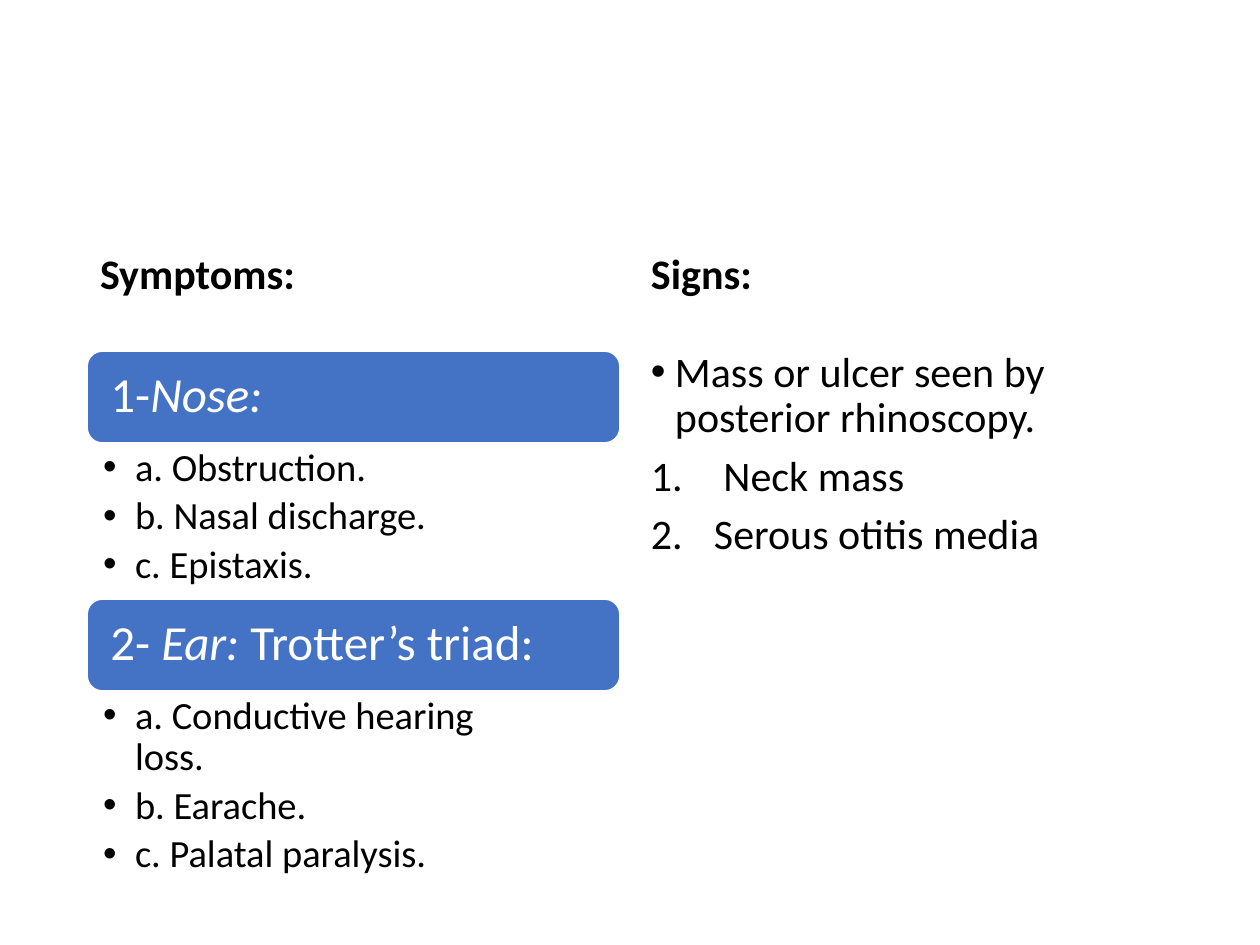
"""Build a slide that lists symptoms beside signs."""
from pptx import Presentation
from pptx.dml.color import RGBColor
from pptx.enum.shapes import MSO_SHAPE as Shape
from pptx.enum.text import MSO_ANCHOR as Anchor, PP_ALIGN as Align
from pptx.oxml.ns import qn
from pptx.util import Emu, Pt
from lxml.etree import SubElement


def px(count):
    return Emu(round(count * 914400 / 126))


def write(frame, paragraphs, size, color="000000", bold=False, before=0, after=0,
          insets=(13, 6, 13, 6), anchor=Anchor.TOP):
    frame.word_wrap = True
    frame.vertical_anchor = anchor
    frame.margin_left, frame.margin_top, frame.margin_right, frame.margin_bottom = map(px, insets)
    for index, (runs, bullet, indent) in enumerate(paragraphs):
        line = frame.add_paragraph() if index else frame.paragraphs[0]
        line.alignment = Align.LEFT
        line.line_spacing = 0.9
        line.space_before, line.space_after = Pt(before), Pt(after)
        for words, italic in runs:
            run = line.add_run()
            run.text = words
            run.font.name, run.font.size = "Calibri", Pt(size)
            run.font.bold, run.font.italic = bold, italic
            run.font.color.rgb = RGBColor.from_string(color)
        if bullet:
            props = line._p.get_or_add_pPr()
            props.set("marL", str(px(indent)))
            props.set("indent", str(-px(indent)))
            if bullet == "•":
                SubElement(props, qn("a:buFont"), typeface="Arial")
                SubElement(props, qn("a:buChar"), char=bullet)
            else:
                SubElement(props, qn("a:buAutoNum"), type=bullet)


deck = Presentation()
deck.slide_width, deck.slide_height = px(1260), px(945)
slide = deck.slides.add_slide(deck.slide_layouts[6])
shapes = slide.shapes

for heading, left in (("Symptoms:", 87), ("Signs:", 638)):
    box = shapes.add_textbox(px(left), px(232), px(534), px(113))
    write(box.text_frame, [([(heading, False)], None, 0)], 24, bold=True, before=7.5,
          insets=(13, 6, 13, 54), anchor=Anchor.BOTTOM)

symptoms = [
    ([("1-", False), ("Nose:", True)],
     ["a. Obstruction.", "b. Nasal discharge.", "c. Epistaxis."]),
    ([("2- ", False), ("Ear: ", True), ("Trotter’s triad:", False)],
     ["a. Conductive hearing \tloss.", "b. Earache.", "c. Palatal paralysis."]),
]
for row, (organ, complaints) in enumerate(symptoms):
    top = 351 + 248 * row
    banner = shapes.add_shape(Shape.ROUNDED_RECTANGLE, px(87), px(top), px(533), px(92))
    banner.shadow.inherit = False
    banner.fill.solid()
    banner.fill.fore_color.rgb = RGBColor.from_string("4472C4")
    banner.line.color.rgb = RGBColor.from_string("FFFFFF")
    banner.line.width = Pt(1)
    write(banner.text_frame, [(organ, None, 0)], 28, "FFFFFF",
          insets=(19, 19, 19, 19), anchor=Anchor.MIDDLE)
    details = shapes.add_textbox(px(87), px(top + 92), px(533), px(156))
    write(details.text_frame, [([(words, False)], "•", 32) for words in complaints], 22,
          after=4, insets=(16, 5, 28, 5))

signs = [
    ("Mass or ulcer seen by posterior rhinoscopy.", "•", 24),
    (" Neck mass", "arabicPeriod", 63),
    ("Serous otitis media", "arabicPeriod", 63),
]
findings = shapes.add_textbox(px(638), px(345), px(535), px(508))
write(findings.text_frame, [([(words, False)], bullet, indent) for words, bullet, indent in signs],
      24, before=7.5)

deck.save("out.pptx")
